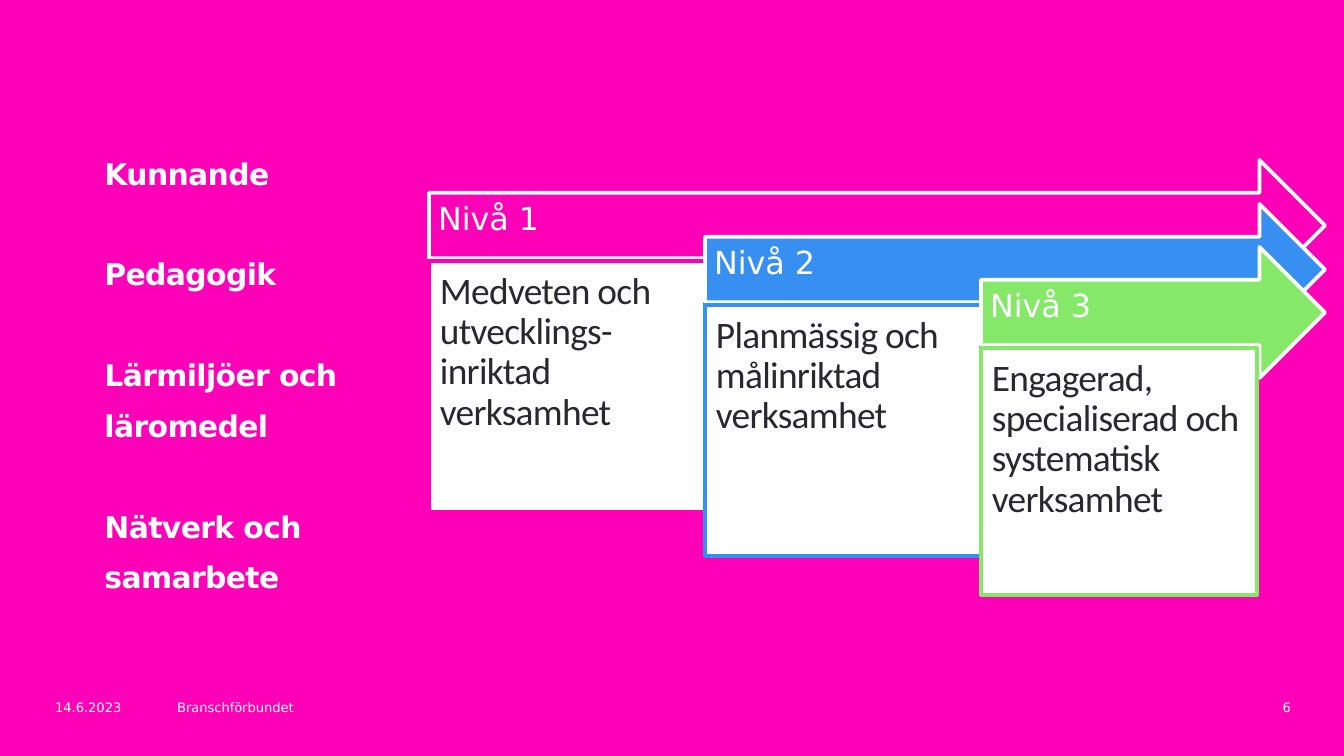
from pptx import Presentation
from pptx.dml.color import RGBColor
from pptx.enum.shapes import MSO_SHAPE
from pptx.enum.text import MSO_ANCHOR, MSO_AUTO_SIZE, PP_ALIGN
from pptx.oxml.ns import qn
from pptx.util import Emu, Inches, Pt
from lxml.etree import SubElement

EMU_PER_PX = Inches(10) / 1344

PINK = RGBColor(0xFF, 0x00, 0xB8)
BLUE = RGBColor(0x37, 0x8F, 0xF1)
GREEN = RGBColor(0x85, 0xE8, 0x69)
WHITE = RGBColor(0xFF, 0xFF, 0xFF)
DARK = RGBColor(0x29, 0x28, 0x2E)

HEADING_FONT = "DejaVu Sans"
BODY_FONT = "Calibri"

# Theme and whether a gap line precedes it
THEMES = [
    ("Kunnande", False),
    ("Pedagogik", True),
    ("Lärmiljöer och läromedel", True),
    ("Nätverk och", True),
    ("samarbete", False),
]

# Heading, description, colour, arrow top, card height
LEVELS = [
    ("Nivå 1", "Medveten och utvecklings-inriktad verksamhet", PINK, 160, 251),
    ("Nivå 2", "Planmässig och målinriktad verksamhet", BLUE, 204, 251),
    ("Nivå 3", "Engagerad, specialiserad och systematisk verksamhet", GREEN, 247, 247),
]
LEVELS_LEFT, LEVELS_RIGHT = 429, 1325
CARD_WIDTH = 276
ARROW_HEIGHT = 131
CARD_OFFSET = 101

# Text, left, width, alignment
FOOTER = [
    ("14.6.2023", 42, 134, PP_ALIGN.LEFT),
    ("Branschförbundet", 164, 191, PP_ALIGN.LEFT),
    ("6", 1177, 127, PP_ALIGN.RIGHT),
]


def px(length):
    return Emu(round(length * EMU_PER_PX))


def style(paragraph, font_name, size, color, bold=False, tracking=0):
    """Set the paragraph's font; tracking is in hundredths of a point."""
    font = paragraph.font
    font.name, font.size, font.bold = font_name, Pt(size), bold
    font.color.rgb = color
    if tracking:
        paragraph._p.pPr.find(qn("a:defRPr")).set("spc", str(tracking))


def set_insets(frame, left, top, right, bottom):
    frame.margin_left, frame.margin_top = px(left), px(top)
    frame.margin_right, frame.margin_bottom = px(right), px(bottom)


def fill_themes(body):
    body.left, body.top, body.width, body.height = px(90), px(134), px(356), px(487)
    frame = body.text_frame
    frame.auto_size = MSO_AUTO_SIZE.NONE
    frame.text = "\n".join(theme for theme, _ in THEMES)
    for paragraph, (_, gap_before) in zip(frame.paragraphs, THEMES):
        properties = paragraph._p.get_or_add_pPr()
        properties.set("marL", str(px(1)))
        properties.set("indent", "0")
        SubElement(properties, qn("a:buNone"))
        paragraph.line_spacing = Pt(27)
        paragraph.space_before = Pt(27 if gap_before else 0)
        style(paragraph, HEADING_FONT, 16, WHITE, bold=True, tracking=-30)


def add_block(slide, preset, box, fill, outline, text):
    """Add an outlined shape with left-aligned text and return it."""
    block = slide.shapes.add_shape(preset, *map(px, box))
    block.shadow.inherit = False
    block.fill.solid()
    block.fill.fore_color.rgb = fill
    block.line.color.rgb = outline
    block.line.width = Pt(2)
    frame = block.text_frame
    frame.word_wrap = True
    frame.text = text
    frame.paragraphs[0].alignment = PP_ALIGN.LEFT
    frame.paragraphs[0].line_spacing = 0.9
    return block


def add_level(slide, left, heading, description, color, top, card_height):
    arrow = add_block(slide, MSO_SHAPE.RIGHT_ARROW,
                      (left, top, LEVELS_RIGHT - left, ARROW_HEIGHT),
                      color, WHITE, heading)
    arrow.text_frame.vertical_anchor = MSO_ANCHOR.MIDDLE
    set_insets(arrow.text_frame, 9, 9, 38, 20)
    style(arrow.text_frame.paragraphs[0], HEADING_FONT, 17, WHITE)

    card = add_block(slide, MSO_SHAPE.RECTANGLE,
                     (left, top + CARD_OFFSET, CARD_WIDTH, card_height),
                     WHITE, color, description)
    card.text_frame.vertical_anchor = MSO_ANCHOR.TOP
    set_insets(card.text_frame, 11, 11, 11, 11)
    style(card.text_frame.paragraphs[0], BODY_FONT, 20, DARK, tracking=-40)


def add_footer_text(slide, text, left, width, alignment):
    frame = slide.shapes.add_textbox(px(left), px(695), px(width), px(24)).text_frame
    frame.word_wrap = True
    frame.vertical_anchor = MSO_ANCHOR.MIDDLE
    frame.text = text
    frame.paragraphs[0].alignment = alignment
    style(frame.paragraphs[0], HEADING_FONT, 7, WHITE)


def main():
    presentation = Presentation()
    presentation.slide_width, presentation.slide_height = px(1344), px(756)
    slide = presentation.slides.add_slide(presentation.slide_layouts[1])
    slide.background.fill.solid()
    slide.background.fill.fore_color.rgb = PINK

    unused_title = slide.shapes.title.element
    unused_title.getparent().remove(unused_title)
    fill_themes(slide.placeholders[1])
    for index, level in enumerate(LEVELS):
        add_level(slide, LEVELS_LEFT + index * CARD_WIDTH, *level)
    for item in FOOTER:
        add_footer_text(slide, *item)
    presentation.save("out.pptx")


if __name__ == "__main__":
    main()
